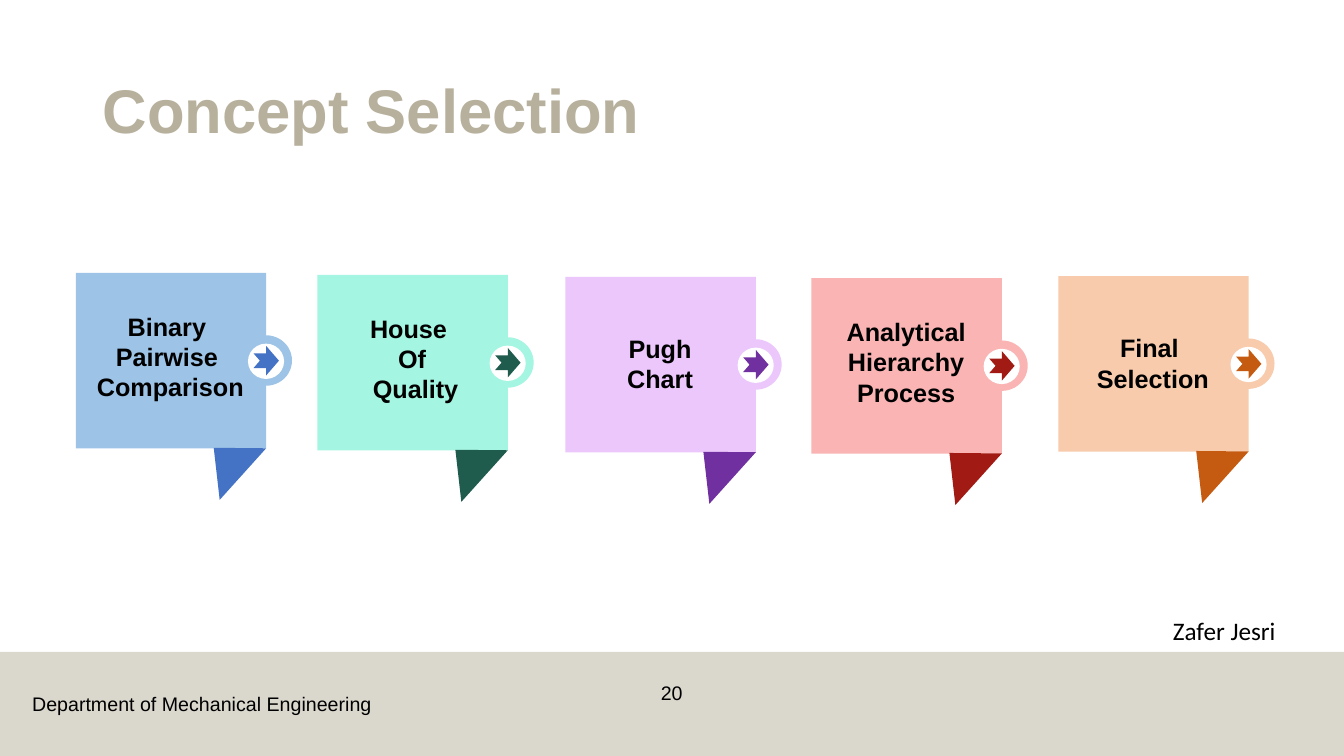
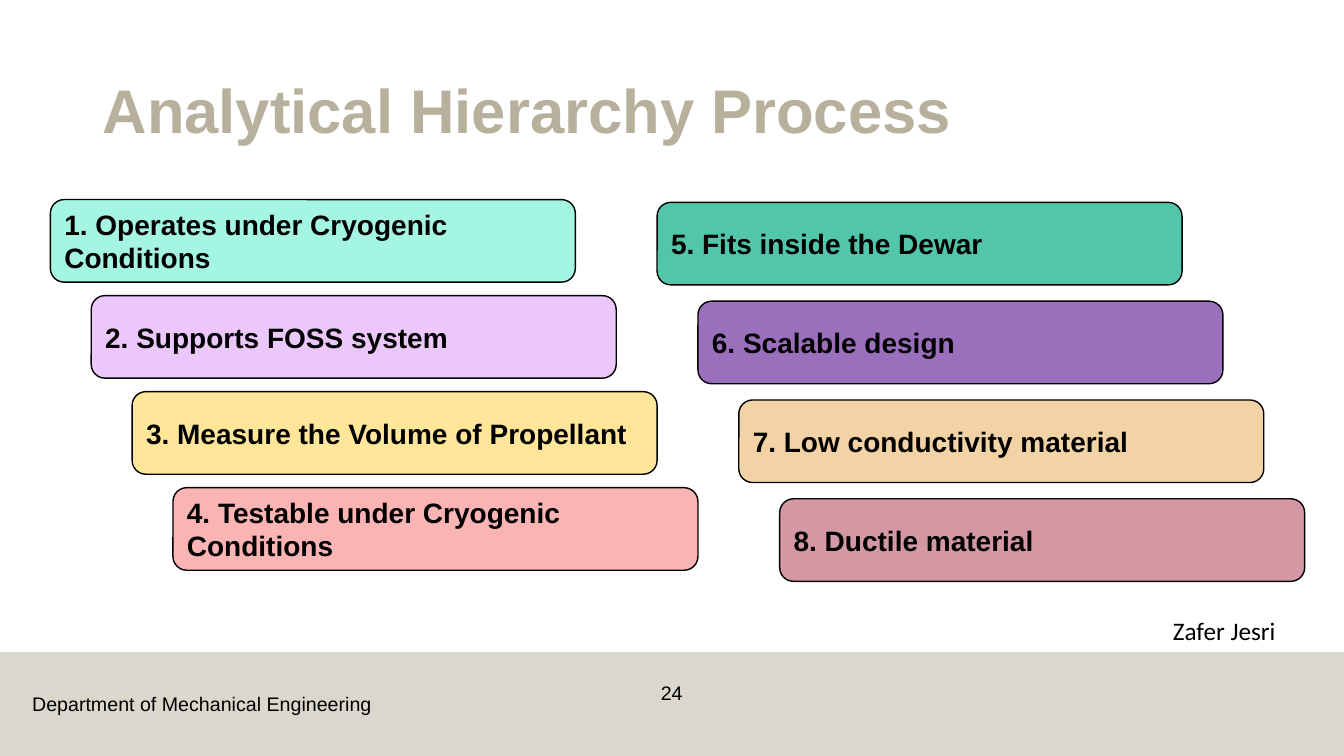
from pptx import Presentation
from pptx.dml.color import RGBColor
from pptx.enum.shapes import MSO_SHAPE, PP_PLACEHOLDER
from pptx.enum.text import MSO_ANCHOR, PP_ALIGN
from pptx.oxml import parse_xml
from pptx.oxml.ns import nsdecls, qn
from pptx.oxml.xmlchemy import OxmlElement
from pptx.util import Cm, Pt

# Shared look
BLACK, WHITE, SAND = "000000", "FFFFFF", "B7B09C"
FONT = "Arial"
DEPARTMENT = "Department of Mechanical Engineering"
AUTHOR = "Zafer Jesri"

# Slide 1: label lines, left and top (cm), card colour, accent colour
SELECTION = {"title": "Concept Selection", "number": "20"}
STEPS = [
    (["Binary ", "Pairwise ", "Comparison"], 1.91, 6.88, "9DC3E6", "4472C4"),
    (["House ", "Of", " Quality"], 8.0, 6.93, "A4F5E1", "205C4D"),
    (["Pugh", "Chart"], 14.25, 6.98, "ECC7FC", "7030A0"),
    (["Analytical Hierarchy Process"], 20.45, 7.01, "FAB4B4", "A11A13"),
    (["Final ", "Selection"], 26.67, 6.96, "F8CBAD", "C55A11"),
]

# Slide 2: each staircase has a start, a step (cm) and its criteria
HIERARCHY = {"title": "Analytical Hierarchy Process", "number": "24"}
STAIRCASES = [
    ((1.27, 5.03), (1.03, 2.42), [
        ("1. Operates under Cryogenic Conditions", "A4F5E1"),
        ("2. Supports FOSS system", "ECC7FC"),
        ("3. Measure the Volume of Propellant", "FFE699"),
        ("4. Testable under Cryogenic Conditions", "FAB4B4"),
    ]),
    ((16.56, 5.1), (1.03, 2.49), [
        ("5. Fits inside the Dewar", "52C6AA"),
        ("6. Scalable design", "9A70BC"),
        ("7. Low conductivity material", "F3D3A5"),
        ("8. Ductile material", "D498A5"),
    ]),
]
CRITERION_SIZE = (13.23, 2.08)


def rgb(hex_colour):
    return RGBColor.from_string(hex_colour)


def add_filled(shapes, preset, box, colour, outline=None):
    shape = shapes.add_shape(preset, *map(Cm, box))
    shape.shadow.inherit = False
    shape.fill.solid()
    shape.fill.fore_color.rgb = rgb(colour)
    if outline:
        shape.line.color.rgb = rgb(outline)
        shape.line.width = Pt(1)
    else:
        shape.line.fill.background()
    return shape


def write(shape, text, size, font=FONT, bold=False, align=PP_ALIGN.LEFT, wrap=True):
    frame = shape.text_frame
    frame.word_wrap = wrap
    frame.text = text
    for paragraph in frame.paragraphs:
        paragraph.alignment = align
        for run in paragraph.runs:
            run.font.name, run.font.size, run.font.bold = font, Pt(size), bold
            run.font.color.rgb = rgb(BLACK)


def add_text(shapes, box, text, size, **style):
    label = shapes.add_textbox(*map(Cm, box))
    write(label, text, size, **style)
    return label


def style_layout(deck, layout):
    """Give the title its style and keep only the title placeholder."""
    for placeholder in list(layout.placeholders):
        if placeholder.placeholder_format.type == PP_PLACEHOLDER.TITLE:
            placeholder.left, placeholder.top = Cm(2.33), Cm(1.01)
            placeholder.width, placeholder.height = Cm(29.21), Cm(3.68)
            placeholder.text_frame.vertical_anchor = MSO_ANCHOR.MIDDLE
        else:
            placeholder.element.getparent().remove(placeholder.element)
    title_style = deck.slide_master.element.find(".//" + qn("p:titleStyle"))
    title_style.replace(title_style.find(qn("a:lvl1pPr")), parse_xml(
        f'<a:lvl1pPr {nsdecls("a")} algn="l">'
        '<a:lnSpc><a:spcPct val="90000"/></a:lnSpc>'
        '<a:spcBef><a:spcPct val="0"/></a:spcBef><a:buNone/>'
        f'<a:defRPr sz="4400" b="1"><a:solidFill><a:srgbClr val="{SAND}"/></a:solidFill>'
        f'<a:latin typeface="{FONT}"/></a:defRPr></a:lvl1pPr>'))


def add_footer(layout, slide):
    """Build the footer with the slide's shape tools, then hand it to the layout."""
    band = add_filled(slide.shapes, MSO_SHAPE.RECTANGLE, (0, 16.43, 33.87, 2.62), SAND)
    alpha = OxmlElement("a:alpha")
    alpha.set("val", "50000")
    band.element.spPr.find(".//" + qn("a:srgbClr")).append(alpha)
    department = add_text(slide.shapes, (0.56, 17.32, 9.12, 0.86), DEPARTMENT, 14, wrap=False)
    author = add_text(slide.shapes, (29.31, 15.37, 4.57, 1.02), AUTHOR, 18, font="Calibri")
    for part in (band, department, author):
        layout.shapes.element.append(part.element)


def add_heading(slide, heading):
    slide.shapes.title.text_frame.text = heading["title"]
    add_text(slide.shapes, (15.95, 17.04, 1.96, 1.02), heading["number"], 14,
             align=PP_ALIGN.CENTER)


def add_step(slide, lines, left, top, colour, accent):
    card = slide.shapes.add_group_shape().shapes

    def place(dx, dy, width, height):
        return left + dx, top + dy, width, height

    add_filled(card, MSO_SHAPE.RECTANGLE, place(0, 0, 4.8, 4.42), colour)
    tail = add_filled(card, MSO_SHAPE.ISOSCELES_TRIANGLE, place(2.97, 4.24, 1.75, 0.99), accent)
    tail.rotation = 312
    label_top, label_height = (1.3, 2.57) if len(lines) == 2 else (0.84, 3.33)
    add_text(card, place(0.1, label_top, 4.57, label_height), "\n".join(lines), 18,
             bold=True, align=PP_ALIGN.CENTER)
    # Badge on the right edge
    add_filled(card, MSO_SHAPE.OVAL, place(4.15, 1.57, 1.3, 1.27), colour)
    add_filled(card, MSO_SHAPE.OVAL, place(4.34, 1.78, 0.91, 0.89), WHITE)
    add_filled(card, MSO_SHAPE.NOTCHED_RIGHT_ARROW, place(4.48, 1.84, 0.64, 0.74), accent)


def add_staircase(slide, start, step, criteria):
    for index, (text, colour) in enumerate(criteria):
        left, top = (origin + index * shift for origin, shift in zip(start, step))
        criterion = add_filled(slide.shapes, MSO_SHAPE.ROUNDED_RECTANGLE,
                               (left, top, *CRITERION_SIZE), colour, outline=BLACK)
        write(criterion, text, 20, bold=True)
        criterion.text_frame.vertical_anchor = MSO_ANCHOR.MIDDLE


def main():
    deck = Presentation()
    deck.slide_width, deck.slide_height = Cm(33.87), Cm(19.05)
    layout = deck.slide_layouts[5]
    style_layout(deck, layout)

    selection = deck.slides.add_slide(layout)
    add_footer(layout, selection)
    add_heading(selection, SELECTION)
    for step in STEPS:
        add_step(selection, *step)

    hierarchy = deck.slides.add_slide(layout)
    add_heading(hierarchy, HIERARCHY)
    for staircase in STAIRCASES:
        add_staircase(hierarchy, *staircase)

    deck.save("out.pptx")


if __name__ == "__main__":
    main()
